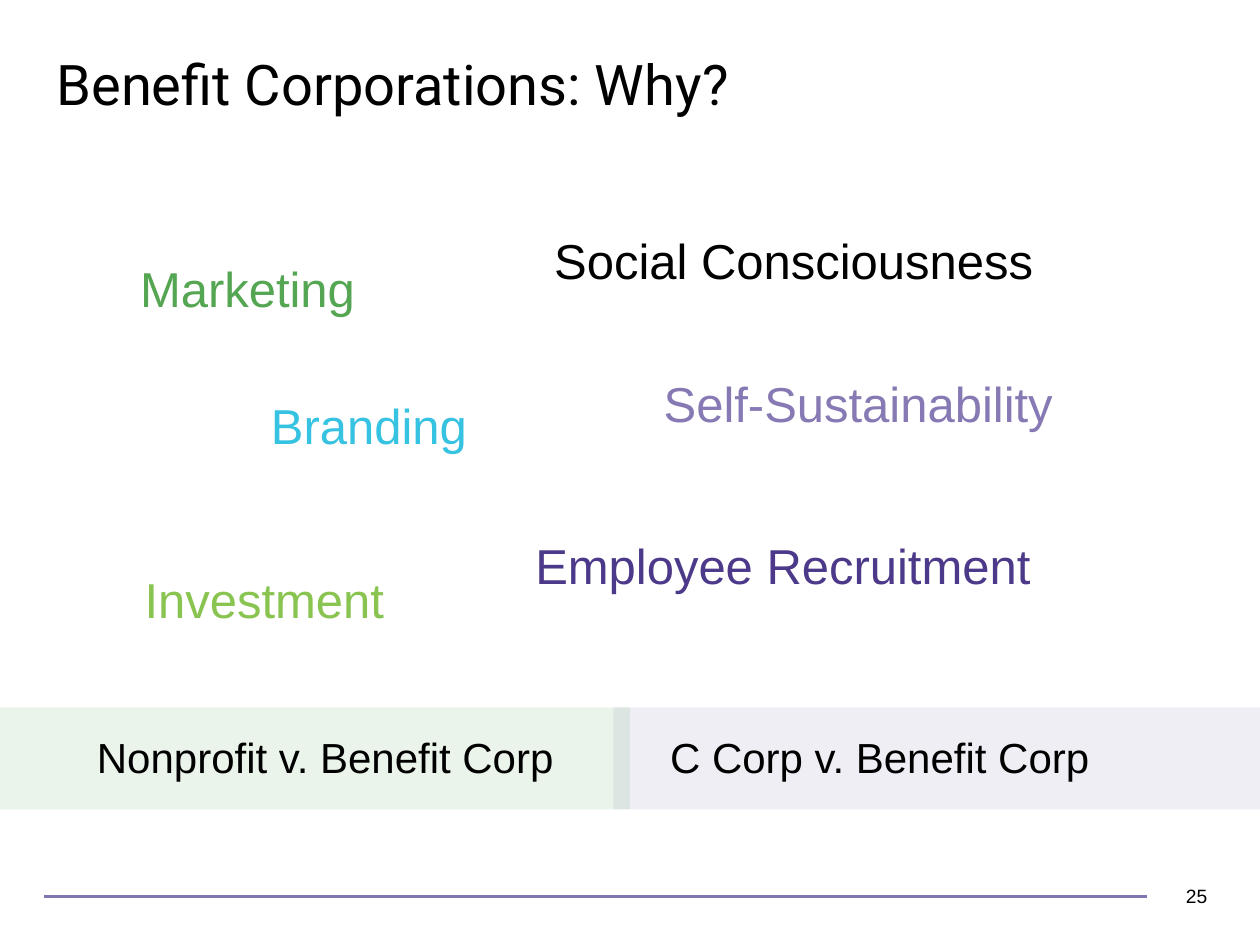
from dataclasses import dataclass

from lxml.etree import SubElement
from pptx import Presentation
from pptx.dml.color import RGBColor
from pptx.enum.shapes import MSO_CONNECTOR, MSO_SHAPE
from pptx.enum.text import MSO_ANCHOR, PP_ALIGN
from pptx.oxml.ns import qn
from pptx.util import Pt


@dataclass(frozen=True)
class Theme:
    heading_font: str = "Roboto"
    body_font: str = "Arial"
    title_size: int = 32
    word_size: int = 28
    caption_size: int = 24
    number_size: int = 11
    black: str = "000000"
    green: str = "55A653"
    lime: str = "89C451"
    cyan: str = "36C2E1"
    lavender: str = "8779B4"
    indigo: str = "4C3989"
    rule: str = "8275B4"


class SlideBuilder:
    def __init__(self, slide, theme):
        self.shapes = slide.shapes
        self.theme = theme

    def rule(self, left, right, y):
        line = self.shapes.add_connector(
            MSO_CONNECTOR.STRAIGHT, Pt(left), Pt(y), Pt(right), Pt(y))
        line.line.color.rgb = RGBColor.from_string(self.theme.rule)
        line.line.width = Pt(1.75)
        SubElement(line._element.spPr, qn("a:effectLst"))

    def band(self, left, top, width, height, color, opacity=12):
        """Add a borderless rectangle; opacity is in percent."""
        band = self.shapes.add_shape(
            MSO_SHAPE.RECTANGLE, Pt(left), Pt(top), Pt(width), Pt(height))
        band.shadow.inherit = False
        band.line.fill.background()
        band.fill.solid()
        band.fill.fore_color.rgb = RGBColor.from_string(color)
        color_element = band._element.spPr.find(".//" + qn("a:srgbClr"))
        SubElement(color_element, qn("a:alpha"), val=str(opacity * 1000))

    def text(self, wording, left, top, width, height, size, color=None,
             font=None, align=PP_ALIGN.LEFT, anchor=MSO_ANCHOR.TOP, spacing=1.0):
        box = self.shapes.add_textbox(Pt(left), Pt(top), Pt(width), Pt(height))
        frame = box.text_frame
        frame.word_wrap = True
        frame.vertical_anchor = anchor
        para = frame.paragraphs[0]
        para.alignment = align
        para.line_spacing = spacing
        span = para.add_run()
        span.text = wording
        span.font.name = font or self.theme.body_font
        span.font.size = Pt(size)
        span.font.color.rgb = RGBColor.from_string(color or self.theme.black)


def main():
    theme = Theme()
    deck = Presentation()
    deck.slide_width, deck.slide_height = Pt(720), Pt(540)
    page = SlideBuilder(deck.slides.add_slide(deck.slide_layouts[6]), theme)

    page.rule(25.2, 655.2, 512.5)
    page.band(0, 404.2, 360, 58.3, theme.green)
    page.band(350.6, 404.2, 369.4, 58.3, theme.lavender)
    page.text("Benefit Corporations: Why?", 25.2, 28.8, 672.5, 58.3,
              theme.title_size, font=theme.heading_font, spacing=0.9)
    page.text("25", 638, 497.8, 59, 28.8, theme.number_size,
              align=PP_ALIGN.RIGHT, anchor=MSO_ANCHOR.MIDDLE)

    reasons = [
        ("Marketing", 73, 144, 199.4, theme.green),
        ("Branding", 147.8, 222.5, 199.4, theme.cyan),
        ("Social Consciousness", 309.6, 128.2, 337, theme.black),
        ("Employee Recruitment", 298.8, 302.4, 350, theme.indigo),
        ("Investment", 75.6, 322, 199.4, theme.lime),
        ("Self-Sustainability", 372.2, 209.7, 291, theme.lavender),
    ]
    for wording, left, top, width, color in reasons:
        page.text(wording, left, top, width, 41, theme.word_size, color)

    captions = [
        ("Nonprofit v. Benefit Corp", 48.3, 309.6),
        ("C Corp v. Benefit Corp", 375.8, 317.5),
    ]
    for wording, left, width in captions:
        page.text(wording, left, 414.2, width, 36, theme.caption_size)

    deck.save("out.pptx")


if __name__ == "__main__":
    main()
